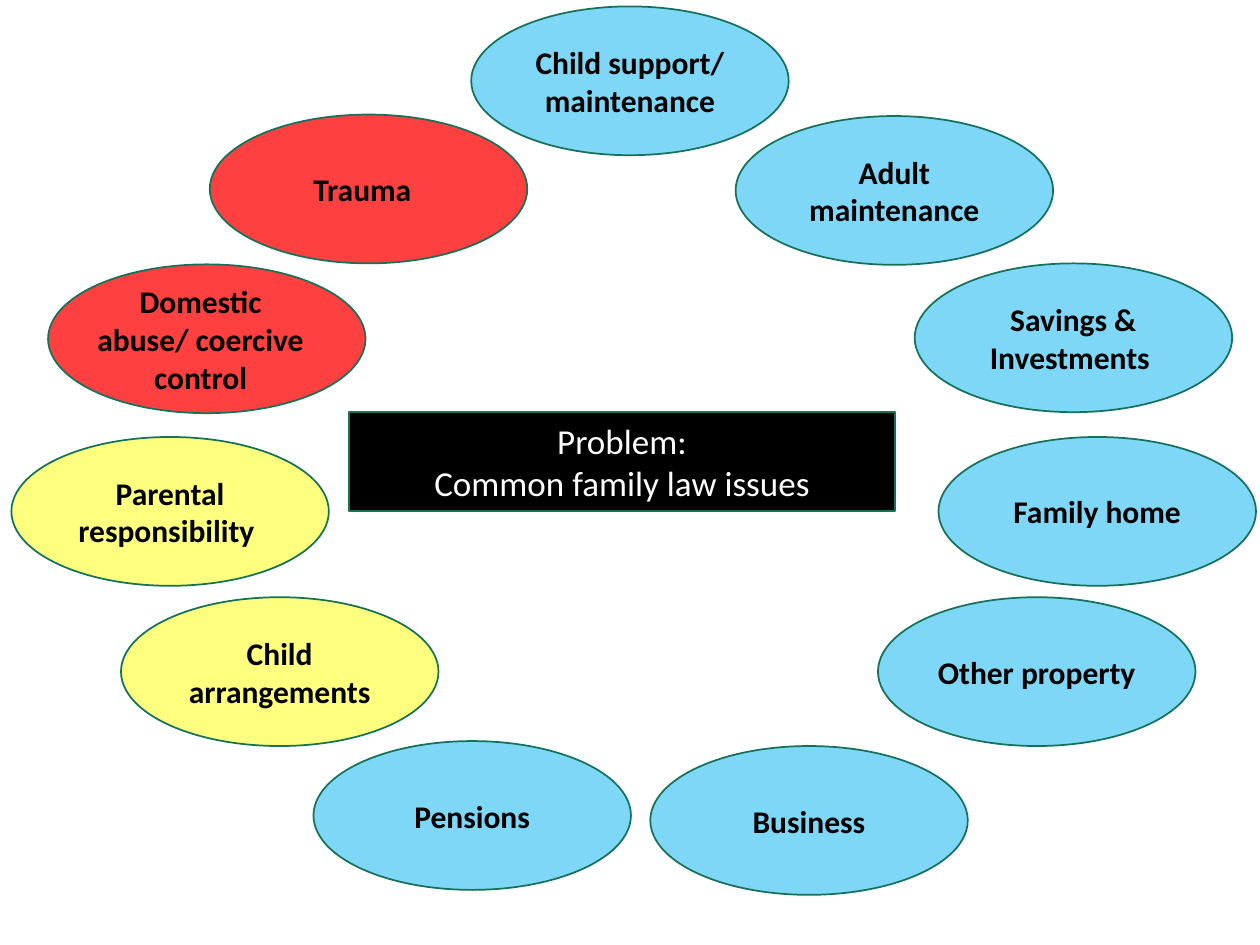
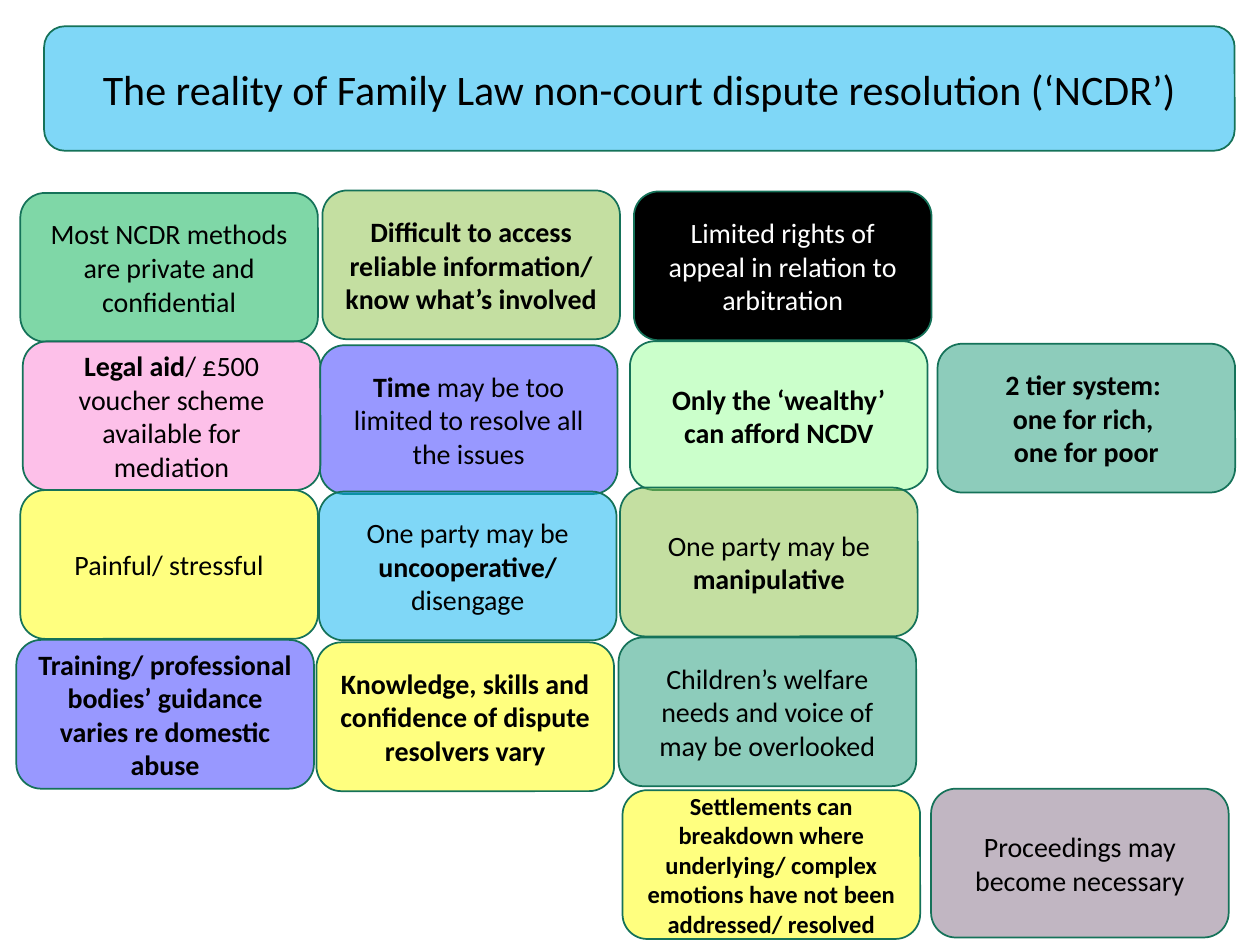
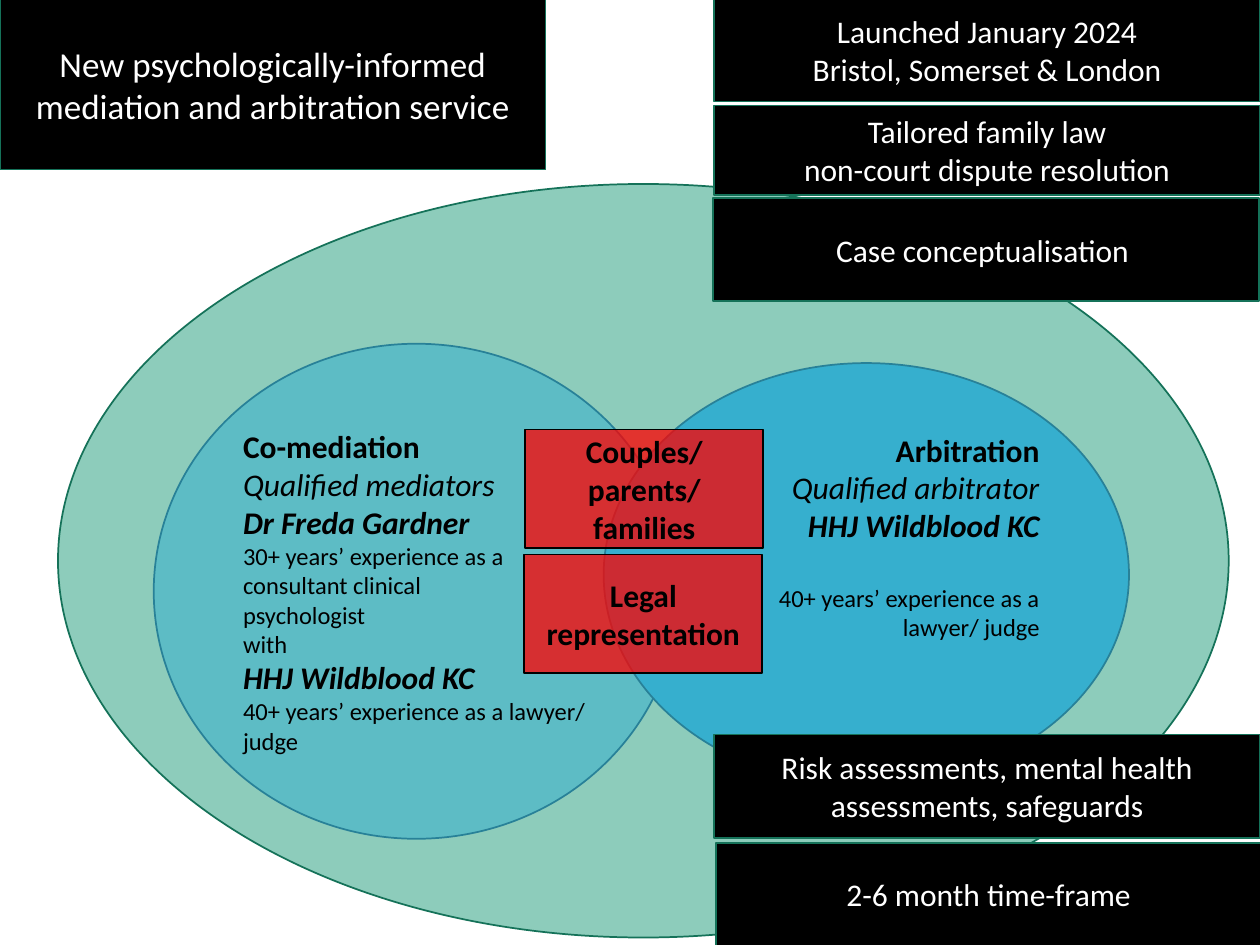
"""Builds three slides on family law issues, dispute resolution and a mediation service."""
import pptx
import pptx.dml.color
import pptx.enum.shapes
import pptx.enum.text
import pptx.util
from lxml import etree
from pptx.oxml.ns import qn

Cm = pptx.util.Cm
Pt = pptx.util.Pt
Kind = pptx.enum.shapes.MSO_SHAPE
Align = pptx.enum.text.PP_ALIGN

FONT = "Calibri"
COLOURS = {
    "black": "000000", "white": "FFFFFF", "outline": "157259", "ring": "288198",
    "sky": "00B0F0", "yellow": "FFFF00", "red": "FF0000", "green": "00B050",
    "indigo": "3333FF", "mint": "99FF99", "mauve": "856E86", "lime": "8BC145",
    "pink": "FD83D4", "teal": "1D9A78", "lagoon": "36AFCE",
}
HALF, STRONG = 50, 75

ISSUE_SIZE = (6.4, 3)
ISSUES = [
    ("Savings & Investments ", 18.44, 5.31, "sky"),
    ("Other property", 17.7, 12.04, "sky"),
    ("Family home", 18.92, 8.81, "sky"),
    ("Adult maintenance", 14.83, 2.34, "sky"),
    ("Pensions", 6.32, 14.94, "sky"),
    ("Child support/ maintenance", 9.5, 0.13, "sky"),
    ("Business", 13.11, 15.04, "sky"),
    ("Parental responsibility ", 0.23, 8.81, "yellow"),
    ("Child arrangements", 2.44, 12.04, "yellow"),
    ("Domestic abuse/ coercive control", 0.97, 5.33, "red"),
    ("Trauma", 4.23, 2.31, "red"),
]
PROBLEM = ["Problem:", "Common family law issues"]

REALITY_TITLE = "The reality of Family Law non-court dispute resolution (‘NCDR’)"
NOTE_SIZE = (6, 3)
NOTES = [
    (["Most NCDR methods are private and confidential"], 0.41, 3.89, "green"),
    (["Limited rights of appeal in relation to arbitration"], 12.78, 3.86, "black"),
    ([[("Time ", "b"), ("may be too limited to resolve all the issues", "")]],
     6.45, 6.96, "indigo"),
    ([[("One party may be ", ""), ("uncooperative/ ", "b"), ("disengage", "")]],
     6.43, 9.91, "sky"),
    ([[("Only the ‘wealthy’ can afford NCDV", "b")]], 12.7, 6.88, "mint"),
    (["Painful/ stressful"], 0.41, 9.88, "yellow"),
    ([[("Settlements can breakdown where underlying/ complex emotions "
        "have not been addressed/ resolved", "bs")]], 12.55, 15.93, "yellow"),
    ([[("Training/ professional bodies’ guidance varies re domestic abuse", "b")]],
     0.33, 12.9, "indigo"),
    ([[("Knowledge, skills and confidence of dispute resolvers vary", "b")]],
     6.38, 12.95, "yellow"),
    (["Proceedings may become necessary"], 18.77, 15.9, "mauve"),
    ([[("Difficult to access reliable information/ know what’s involved", "b")]],
     6.5, 3.84, "lime"),
    ([[("Legal aid", "b"), ("/ £500 voucher scheme available for mediation", "")]],
     0.46, 6.88, "pink"),
    (["Children’s welfare needs and voice of may be overlooked"], 12.47, 12.85, "teal"),
    ([[("2 tier system: ", "b")], [("one for rich, ", "b")], [("one for poor", "b")]],
     18.9, 6.93, "teal"),
    ([[("One party may be ", ""), ("manipulative", "b")]], 12.5, 9.83, "lime"),
]

SERVICE_TITLE = "New psychologically-informed mediation and arbitration service"
MEDIATION = [
    [("Co-mediation", "b")],
    [("Qualified mediators", "i")],
    [("Dr Freda Gardner", "bi")],
    [("30+ years’ experience as a consultant clinical", "s")],
    [("psychologist", "s")],
    [("with", "s")],
    [("HHJ Wildblood KC", "bi")],
    [("40+ years’ experience as a lawyer/ judge", "s")],
]
ARBITRATION = [
    [("Arbitration", "b")],
    [("Qualified arbitrator", "i")],
    [("HHJ Wildblood KC", "bi")],
    [("40+ years’ experience as a lawyer/ judge", "s")],
]
CLIENT_SIZE = (4.8, 2.39)
CLIENTS = [("Couples/ parents/ families", 10.59, 8.66), ("Legal representation", 10.57, 11.18)]
FACTS = [
    (["Launched January 2024", "Bristol, Somerset & London"], 14.4, -0.03, 2.08),
    (["Tailored family law", "non-court dispute resolution"], 14.4, 2.13, 1.8),
    (["2-6 month time-frame"], 14.43, 16.99, 2.08),
    (["Case conceptualisation "], 14.38, 3.99, 2.08),
    (["Risk assessments, mental health assessments, safeguards"], 14.4, 14.81, 2.08),
]


def colour(name):
    return pptx.dml.color.RGBColor.from_string(COLOURS[name])


def write(frame, lines, size, ink, align):
    """Fill a frame; marks are b for bold, i for italic and s for small."""
    for number, line in enumerate(lines):
        para = frame.add_paragraph() if number else frame.paragraphs[0]
        para.alignment = align
        for text, marks in [(line, "")] if isinstance(line, str) else line:
            span = para.add_run()
            span.text = text
            formats = {"name": FONT, "size": Pt(14 if "s" in marks else size),
                       "bold": "b" in marks, "italic": "i" in marks}
            for key, value in formats.items():
                setattr(span.font, key, value)
            span.font.color.rgb = colour(ink)


def add_box(page, kind, place, fill, lines=(), size=18, opacity=100,
            outline="outline", align=Align.CENTER, **insets):
    """Add an outlined shape at a place given in centimetres and write its text."""
    box = page.shapes.add_shape(kind, *map(Cm, place))
    box.shadow.inherit = False
    box.fill.solid()
    box.fill.fore_color.rgb = colour(fill)
    if opacity < 100:
        tint = box._element.spPr.find(qn("a:solidFill")).find(qn("a:srgbClr"))
        etree.SubElement(tint, qn("a:alpha")).set("val", str(opacity * 1000))
    box.line.color.rgb = colour(outline)
    box.line.width = Pt(1)
    frame = box.text_frame
    frame.word_wrap = True
    frame.vertical_anchor = pptx.enum.text.MSO_ANCHOR.MIDDLE
    for side, length in insets.items():
        setattr(frame, side, Cm(length))
    write(frame, lines, size, "white" if fill == "black" else "black", align)
    return box


def build_issues(page):
    for text, left, top, fill in ISSUES:
        alert = fill == "red"
        add_box(page, Kind.OVAL, (left, top, *ISSUE_SIZE), fill, [[(text, "b")]],
                opacity=STRONG if alert else HALF, margin_left=0 if alert else 0.25)
    add_box(page, Kind.RECTANGLE, (7.04, 8.31, 11, 2), "black", PROBLEM, 20)


def build_reality(page):
    for lines, left, top, fill in NOTES:
        add_box(page, Kind.ROUNDED_RECTANGLE, (left, top, *NOTE_SIZE), fill, lines, 16,
                100 if fill == "black" else HALF)
    add_box(page, Kind.ROUNDED_RECTANGLE, (0.89, 0.53, 24, 2.51), "sky",
            [REALITY_TITLE], 24, HALF)


def build_service(page):
    add_box(page, Kind.OVAL, (1.17, 3.71, 23.6, 15.19), "teal", opacity=HALF)
    add_box(page, Kind.RECTANGLE, (0, -0.03, 11, 3.45), "black", [SERVICE_TITLE], 20)
    add_box(page, Kind.OVAL, (3.1, 6.93, 10.59, 9.98), "lagoon", MEDIATION, opacity=55,
            outline="ring", align=Align.LEFT)
    arbitration = add_box(page, Kind.OVAL, (12.17, 7.32, 10.59, 8.53), "lagoon", ARBITRATION,
                          outline="ring", align=Align.RIGHT,
                          margin_left=1.52, margin_bottom=1.68)
    arbitration.text_frame.paragraphs[-1].space_before = Pt(22)
    for text, left, top in CLIENTS:
        add_box(page, Kind.RECTANGLE, (left, top, *CLIENT_SIZE), "red", [[(text, "b")]],
                opacity=STRONG, outline="black")
    for lines, left, top, height in FACTS:
        add_box(page, Kind.RECTANGLE, (left, top, 11, height), "black", lines)


def main():
    deck = pptx.Presentation()
    deck.slide_width, deck.slide_height = Cm(25.4), Cm(19.05)
    for build in (build_issues, build_reality, build_service):
        build(deck.slides.add_slide(deck.slide_layouts[6]))
    deck.save("out.pptx")


if __name__ == "__main__":
    main()
